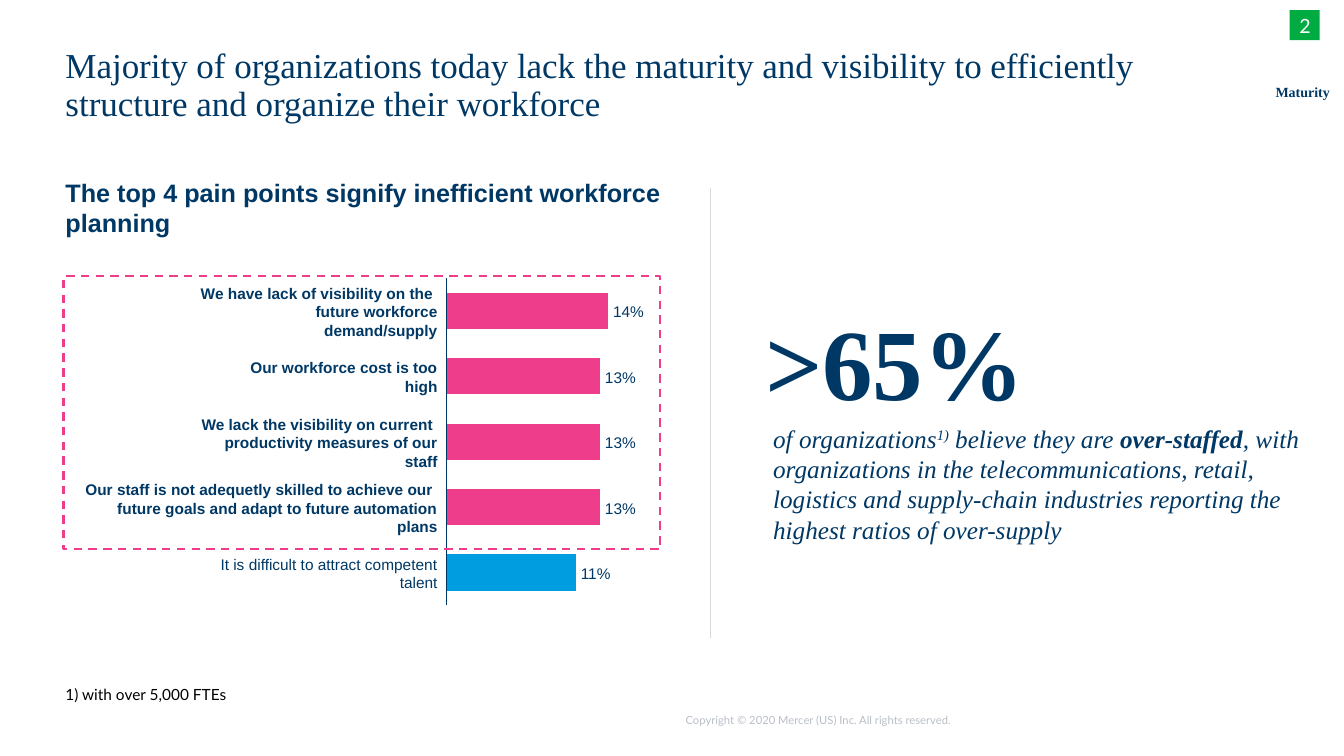
from lxml import etree
from pptx import Presentation
from pptx.chart.data import CategoryChartData
from pptx.dml.color import RGBColor
from pptx.enum.chart import XL_CHART_TYPE as CT, XL_TICK_LABEL_POSITION as TL, XL_TICK_MARK as TM
from pptx.enum.dml import MSO_LINE
from pptx.enum.shapes import MSO_CONNECTOR, MSO_SHAPE
from pptx.enum.text import MSO_ANCHOR, PP_ALIGN
from pptx.oxml import parse_xml
from pptx.oxml.ns import nsdecls, qn
from pptx.util import Inches, Pt

COLORS = {"navy": "003865", "pink": "EE3D8B", "blue": "009DE0", "green": "00AC41",
          "rule": "D9D9D9", "grey": "B9BFC7", "black": "000000", "white": "FFFFFF"}
SERIF, SANS, LATO = "Times New Roman", "Arial", "Lato"
FLUSH, PADDED = (0, 0, 0, 0), (0.1, 0.05, 0.1, 0.05)
PAIN_POINTS = [
    ("We have lack of visibility on the \vfuture workforce demand/supply", 2.37, 100, "14%"),
    ("Our workforce cost is too high", 2.21, 95, "13%"),
    ("We lack the visibility on current \vproductivity measures of our staff", 2.47, 95, "13%"),
    ("Our staff is not adequetly skilled to achieve our \v"
     "future goals and adapt to future automation plans", 3.6, 95, "13%"),
    ("It is difficult to attract competent talent", 2.55, 80, "11%"),
]
TOP_COUNT = 4
FIRST_ROW, ROW_STEP = 3.09, 0.65


def rgb(name):
    """Return the named colour."""
    return RGBColor.from_string(COLORS[name])


def inches(*values):
    """Convert numbers to lengths."""
    return [Inches(v) for v in values]


def set_font(font, color="navy", **formats):
    """Apply a colour and a dict of format values to a font."""
    font.color.rgb = rgb(color)
    for key, value in formats.items():
        setattr(font, key, Pt(value) if key == "size" else value)


def add_text(s, at, text, align=None, anchor=MSO_ANCHOR.TOP, insets=FLUSH, wrap=True,
             spacing=None, **fmt):
    """Add a text box with one formatted paragraph and return the paragraph."""
    tf = s.shapes.add_textbox(*inches(*at)).text_frame
    tf.word_wrap, tf.vertical_anchor = wrap, anchor
    for side, inset in zip(("left", "top", "right", "bottom"), insets):
        setattr(tf, f"margin_{side}", Inches(inset))
    p = tf.paragraphs[0]
    p.text, p.alignment, p.line_spacing = text, align, spacing
    for r in p.runs:
        set_font(r.font, **fmt)
    return p


def add_rect(s, at, fill=None):
    """Add a rectangle without shadow, filled or hollow."""
    sp = s.shapes.add_shape(MSO_SHAPE.RECTANGLE, *inches(*at))
    sp.shadow.inherit = False
    if fill:
        sp.fill.solid()
        sp.fill.fore_color.rgb = rgb(fill)
        sp.line.fill.background()
    else:
        sp.fill.background()
    return sp


def add_divider(s, x, top, bottom):
    """Add the thin vertical rule between the two halves."""
    line = s.shapes.add_connector(MSO_CONNECTOR.STRAIGHT, *inches(x, top, x, bottom))
    line.line.color.rgb, line.line.width = rgb("rule"), Pt(0.5)
    etree.SubElement(line._element.spPr, qn("a:effectLst"))


def set_plot_area(chart, x, y, w, h):
    """Fix the inner plot area as fractions of the chart."""
    area = chart._chartSpace.chart.plotArea
    for old in area.findall(qn("c:layout")):
        area.remove(old)
    sizes = "".join(f'<c:{k} val="{v}"/>' for k, v in zip("xywh", (x, y, w, h)))
    area.insert(0, parse_xml(
        f'<c:layout {nsdecls("c")}><c:manualLayout><c:layoutTarget val="inner"/>'
        f'<c:xMode val="edge"/><c:yMode val="edge"/>{sizes}</c:manualLayout></c:layout>'))


def add_bars(s, at):
    """Add the bar chart of pain points."""
    data = CategoryChartData()
    data.categories = [str(i + 1) for i in range(len(PAIN_POINTS))]
    data.add_series("Series 1", [value for _, _, value, _ in PAIN_POINTS])
    chart = s.shapes.add_chart(CT.BAR_STACKED, *inches(*at), data).chart
    chart.has_legend = chart.has_title = False
    set_font(chart.font, size=10, name=LATO)
    cat, val, plot = chart.category_axis, chart.value_axis, chart.plots[0]
    cat.tick_label_position, cat.major_tick_mark = TL.NONE, TM.NONE
    cat.reverse_order = True
    cat.format.line.color.rgb, cat.format.line.width = rgb("navy"), Pt(0.75)
    val.minimum_scale, val.maximum_scale = 0, 100
    val.has_major_gridlines = val.visible = False
    plot.gap_width, plot.overlap, plot.vary_by_categories = 80, 100, False
    series = plot.series[0]
    for fill, color in ((series.format.fill, "pink"),
                        (series.points[TOP_COUNT].format.fill, "blue")):
        fill.solid()
        fill.fore_color.rgb = rgb(color)
    set_plot_area(chart, 0.051, 0.026, 0.898, 0.947)


def add_bar_labels(s):
    """Add the name left of each bar and the percentage right of it."""
    for i, (name, width, value, percent) in enumerate(PAIN_POINTS):
        middle = FIRST_ROW + i * ROW_STEP
        height = 0.37 if "\v" in name else 0.18
        fmt = dict(anchor=MSO_ANCHOR.MIDDLE, wrap=False, size=11, name=SANS)
        add_text(s, (4.34 - width, middle - height / 2, width, height), name,
                 align=PP_ALIGN.RIGHT, bold=i < TOP_COUNT, **fmt)
        add_text(s, (4.46 + 1.6 * value / 100, middle - 0.09, 0.35, 0.18), percent,
                 insets=(0.02, 0, 0.02, 0), **fmt)


def add_finding(s):
    """Add the large figure and the sentence below it."""
    add_text(s, (7.49, 3.03, 3.02, 1.08), ">65%", anchor=MSO_ANCHOR.MIDDLE,
             insets=PADDED, size=72, name=SERIF, bold=True)
    p = add_text(s, (7.57, 4.15, 5.63, 1.29), "of organizations", insets=PADDED,
                 size=18, name=SERIF, italic=True)
    for text, bold, raised in (
            ("1)", False, True), (" believe they are ", False, False),
            ("over-staffed", True, False),
            (", with organizations in the telecommunications, retail, logistics and "
             "supply-chain industries reporting the highest ratios of over-supply", False, False)):
        r = p.add_run()
        r.text = text
        set_font(r.font, size=18, name=SERIF, italic=True, bold=bold)
        if raised:
            r.font._element.set("baseline", "30000")


def add_badge(s):
    """Add the green number badge."""
    tf = add_rect(s, (12.79, 0.1, 0.3, 0.3), "green").text_frame
    tf.vertical_anchor = MSO_ANCHOR.MIDDLE
    p = tf.paragraphs[0]
    p.text, p.alignment = "2", PP_ALIGN.CENTER
    set_font(p.runs[0].font, "white", size=14, name=LATO)


def main():
    """Build the slide and save it."""
    prs = Presentation()
    prs.slide_width, prs.slide_height = inches(13.33, 7.5)
    s = prs.slides.add_slide(prs.slide_layouts[6])
    add_text(s, (6.8, 7.08, 4.58, 0.3), "Copyright © 2020 Mercer (US) Inc. All rights reserved.",
             wrap=False, size=8, name=LATO, color="grey")
    add_text(s, (0.65, 0.48, 11.6, 1.04),
             "Majority of organizations today lack the maturity and visibility to efficiently "
             "structure and organize their workforce", spacing=0.9, size=25, name=SERIF)
    add_bars(s, (4.34, 2.67, 1.78, 3.43))
    add_bar_labels(s)
    add_text(s, (0.65, 1.76, 6.13, 0.23),
             "The top 4 pain points signify inefficient workforce planning",
             size=18, name=SANS, bold=True)
    frame = add_rect(s, (0.63, 2.74, 5.92, 2.71)).line
    frame.color.rgb, frame.width, frame.dash_style = rgb("pink"), Pt(1.5), MSO_LINE.DASH
    add_text(s, (12.63, 0.79, 0.58, 0.25), "Maturity", align=PP_ALIGN.CENTER,
             anchor=MSO_ANCHOR.MIDDLE, size=10, name=SERIF, bold=True)
    add_finding(s)
    add_text(s, (0.55, 6.68, 7.5, 0.41), "1) with over 5,000 FTEs", anchor=MSO_ANCHOR.MIDDLE,
             insets=PADDED, size=11, name=LATO, color="black")
    add_divider(s, 7.05, 1.87, 6.33)
    add_badge(s)
    prs.save("out.pptx")


if __name__ == "__main__":
    main()
